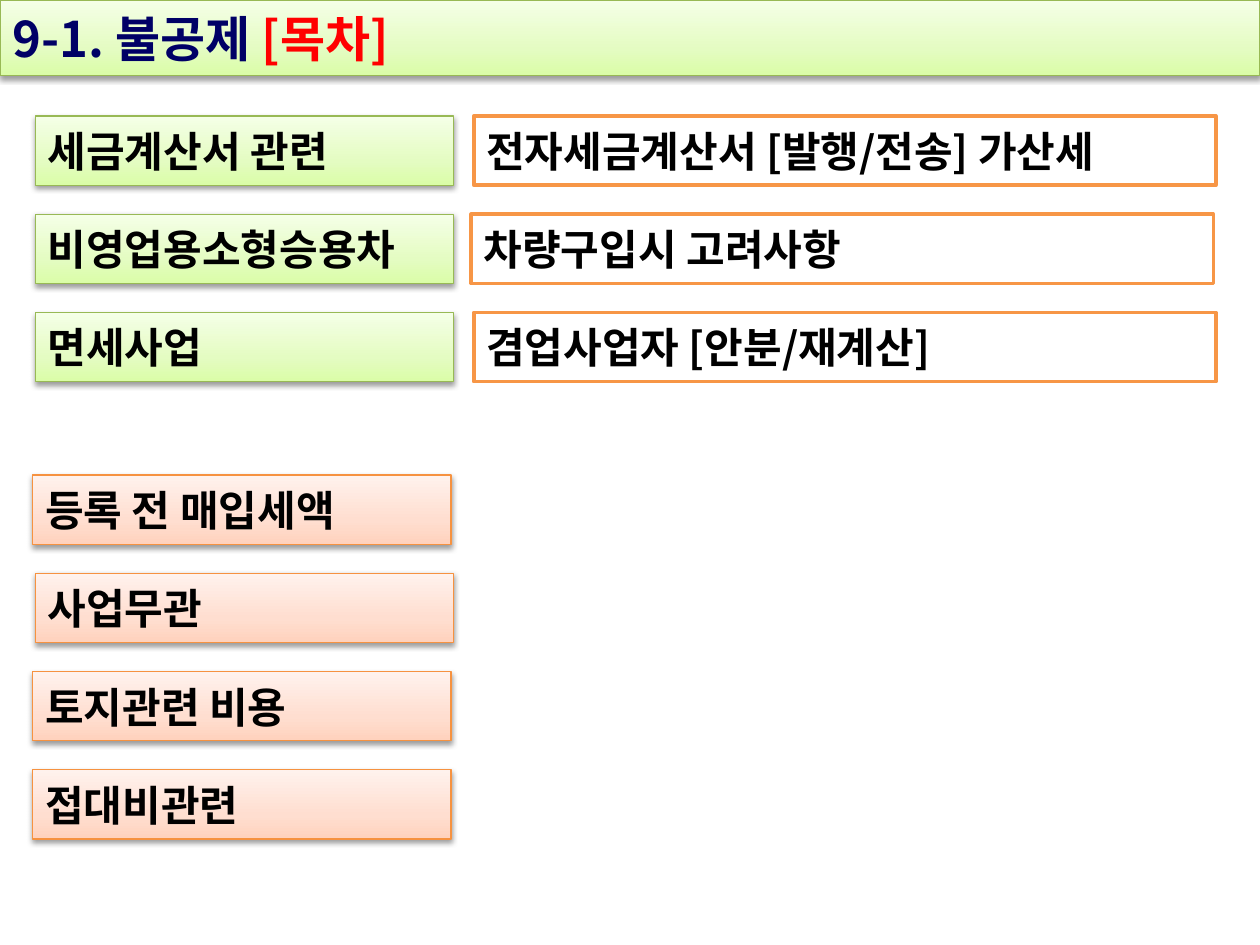
import copy
from dataclasses import dataclass

import lxml.etree
import pptx
import pptx.dml.color
import pptx.enum.shapes
import pptx.enum.text
import pptx.oxml.ns
import pptx.util

FONT = "Noto Sans CJK KR"
PAGE_WIDTH, PAGE_HEIGHT = 10, 7.5
TITLE_HEIGHT = 0.6
LABEL_LEFT, LABEL_WIDTH = 0.28, 3.32
DETAIL_LEFT, DETAIL_WIDTH = 3.76, 5.89
ROW_HEIGHT, ROW_PITCH = 0.55, 0.78
DEDUCTION_TOP, EXPENSE_TOP = 0.92, 3.77
OUTDENT = -0.02


@dataclass(frozen=True)
class Style:
    line: str
    line_width: float
    fills: tuple[str, ...]


@dataclass(frozen=True)
class Entry:
    text: str
    column: tuple[float, float]
    top: float
    row: int
    style: Style
    shift: float = 0


GREEN = Style("98B955", 0.75, ("DAFDA7", "E4FCC2", "F5FFE7"))
ORANGE = Style("F69240", 0.75, ("FFD2BD", "FFDED0", "FFF2ED"))
OUTLINE = Style("F79646", 2, ("FFFFFF",))
LABEL = (LABEL_LEFT, LABEL_WIDTH)
DETAIL = (DETAIL_LEFT, DETAIL_WIDTH)

ENTRIES = [
    Entry("세금계산서 관련", LABEL, DEDUCTION_TOP, 0, GREEN),
    Entry("비영업용소형승용차", LABEL, DEDUCTION_TOP, 1, GREEN),
    Entry("면세사업", LABEL, DEDUCTION_TOP, 2, GREEN),
    Entry("등록 전 매입세액", LABEL, EXPENSE_TOP, 0, ORANGE, OUTDENT),
    Entry("사업무관", LABEL, EXPENSE_TOP, 1, ORANGE),
    Entry("토지관련 비용", LABEL, EXPENSE_TOP, 2, ORANGE, OUTDENT),
    Entry("접대비관련", LABEL, EXPENSE_TOP, 3, ORANGE, OUTDENT),
    Entry("전자세금계산서 [발행/전송] 가산세", DETAIL, DEDUCTION_TOP, 0, OUTLINE),
    Entry("차량구입시 고려사항", DETAIL, DEDUCTION_TOP, 1, OUTLINE, OUTDENT),
    Entry("겸업사업자 [안분/재계산]", DETAIL, DEDUCTION_TOP, 2, OUTLINE),
]


def rgb(value: str) -> pptx.dml.color.RGBColor:
    return pptx.dml.color.RGBColor.from_string(value)


def place(box, left: float, top: float, width: float, height: float) -> None:
    box.left, box.top, box.width, box.height = map(
        pptx.util.Inches, (left, top, width, height))


def add_shadow(box) -> None:
    effects = box._element.spPr.find(pptx.oxml.ns.qn("a:effectLst"))
    effects.append(pptx.oxml.parse_xml(
        f'<a:outerShdw {pptx.oxml.ns.nsdecls("a")} blurRad="{pptx.util.Pt(3.1)}" '
        f'dist="{pptx.util.Pt(1.6)}" dir="5400000" rotWithShape="0">'
        '<a:srgbClr val="000000"><a:alpha val="38000"/></a:srgbClr></a:outerShdw>'))


def fill_gradient(box, colours: tuple[str, ...]) -> None:
    """Run three colours from the bottom edge to the top edge."""
    box.fill.gradient()
    box.fill.gradient_angle = 90
    stops = next(box._element.spPr.iter(pptx.oxml.ns.qn("a:gsLst")))
    stops.append(copy.deepcopy(stops[-1]))
    for stop, position, colour in zip(box.fill.gradient_stops, (0, 0.35, 1), colours):
        stop.position = position
        stop.color.rgb = rgb(colour)


def apply_style(box, style: Style) -> None:
    box.shadow.inherit = False
    box.line.color.rgb = rgb(style.line)
    box.line.width = pptx.util.Pt(style.line_width)
    if len(style.fills) > 1:
        fill_gradient(box, style.fills)
        add_shadow(box)
    else:
        box.fill.solid()
        box.fill.fore_color.rgb = rgb(style.fills[0])
    frame = box.text_frame
    frame.word_wrap = True
    frame.auto_size = pptx.enum.text.MSO_AUTO_SIZE.NONE
    frame.vertical_anchor = pptx.enum.text.MSO_ANCHOR.MIDDLE
    frame.paragraphs[0].alignment = pptx.enum.text.PP_ALIGN.LEFT


def add_text(para, text: str, *, size: float = 24, colour: str = "000000") -> None:
    span = para.add_run()
    span.text = text
    span.font.name = FONT
    span.font.size = pptx.util.Pt(size)
    span.font.bold = True
    span.font.color.rgb = rgb(colour)
    east_asian = lxml.etree.SubElement(span.font._element, pptx.oxml.ns.qn("a:ea"))
    east_asian.set("typeface", FONT)


def draw_title(page) -> None:
    title = page.shapes.title
    place(title, 0, 0, PAGE_WIDTH, TITLE_HEIGHT)
    apply_style(title, GREEN)
    para = title.text_frame.paragraphs[0]
    add_text(para, "9-1. 불공제 ", size=28, colour="000066")
    add_text(para, "[목차]", size=28, colour="FF0000")


def draw_entry(page, entry: Entry) -> None:
    box = page.shapes.add_shape(pptx.enum.shapes.MSO_SHAPE.RECTANGLE, 0, 0, 0, 0)
    left, width = entry.column
    place(box, left + entry.shift, entry.top + entry.row * ROW_PITCH, width, ROW_HEIGHT)
    apply_style(box, entry.style)
    add_text(box.text_frame.paragraphs[0], entry.text)


def main() -> None:
    deck = pptx.Presentation()
    deck.slide_width = pptx.util.Inches(PAGE_WIDTH)
    deck.slide_height = pptx.util.Inches(PAGE_HEIGHT)
    page = deck.slides.add_slide(deck.slide_layouts.get_by_name("Title Only"))
    draw_title(page)
    for entry in ENTRIES:
        draw_entry(page, entry)
    deck.save("out.pptx")


if __name__ == "__main__":
    main()
